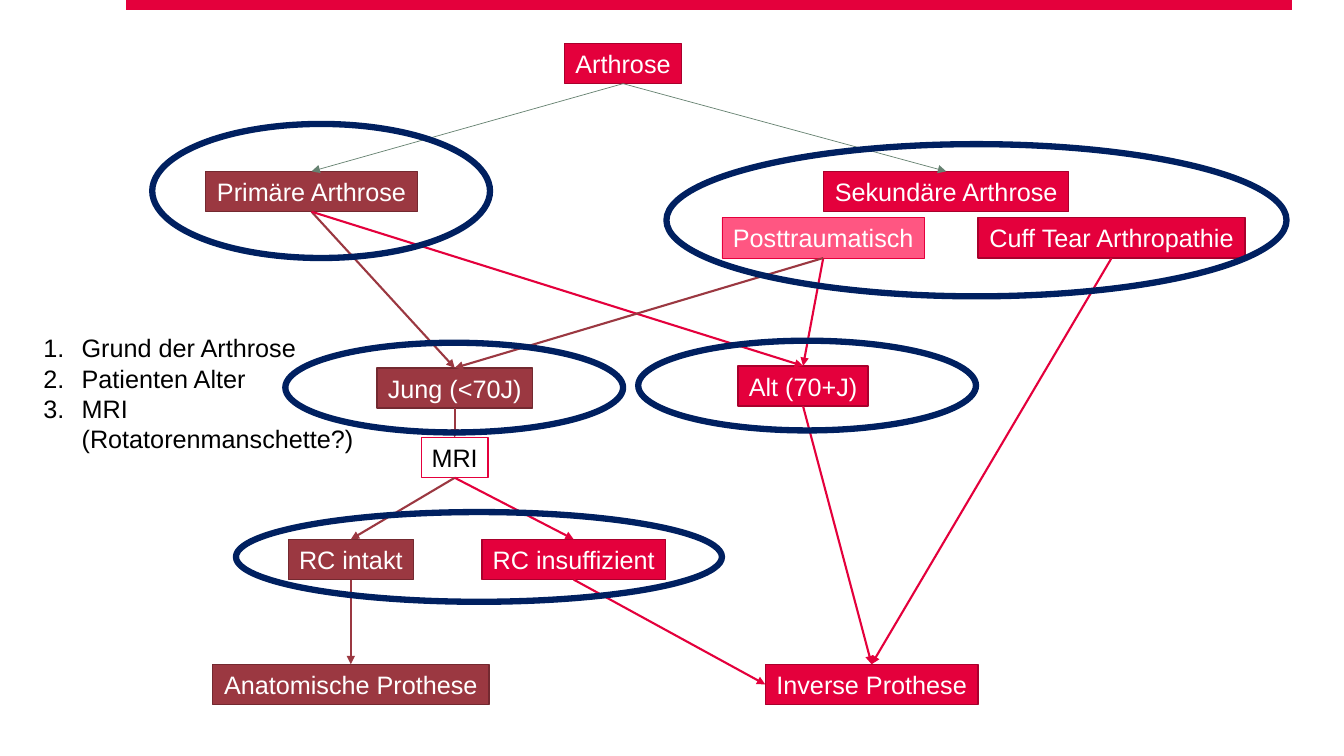
from dataclasses import dataclass

from lxml import etree
from pptx import Presentation
from pptx.dml.color import RGBColor
from pptx.enum.shapes import MSO_CONNECTOR, MSO_SHAPE
from pptx.enum.text import MSO_ANCHOR, MSO_AUTO_SIZE, PP_ALIGN
from pptx.oxml.ns import qn
from pptx.util import Emu, Pt

RECTANGLE, ELLIPSE = MSO_SHAPE.RECTANGLE, MSO_SHAPE.OVAL
STRAIGHT = MSO_CONNECTOR.STRAIGHT
FIT_TEXT = MSO_AUTO_SIZE.SHAPE_TO_FIT_TEXT
MIDDLE, TOP_ANCHOR = MSO_ANCHOR.MIDDLE, MSO_ANCHOR.TOP
LEFT_ALIGN, CENTER = PP_ALIGN.LEFT, PP_ALIGN.CENTER

TOP, LEFT, BOTTOM = 0, 1, 2  # connection sites of a rectangle
EMU_PER_PX = 9144  # 100 px to the inch
BOX_HEIGHT = 40


@dataclass(frozen=True)
class Theme:
    font: str = "Arial"
    size: int = 18
    red: str = "E4003C"
    dark_red: str = "A9002C"
    pink: str = "FF5682"
    brown: str = "9B3841"
    dark_brown: str = "732930"
    gray: str = "668271"
    navy: str = "002060"
    white: str = "FFFFFF"
    black: str = "000000"
    bar_width: float = 7.5
    ring_width: float = 4.5
    arrow_width: float = 1.5
    border_width: float = 1
    thin_width: float = 0.5


THEME = Theme()

# Kind of box: fill, border, border width, text colour
BOX_STYLES = {
    "inverse": (THEME.red, THEME.dark_red, THEME.border_width, THEME.white),
    "anatomic": (THEME.brown, THEME.dark_brown, THEME.border_width, THEME.white),
    "trauma": (THEME.pink, THEME.red, THEME.thin_width, THEME.white),
    "exam": (THEME.white, THEME.red, THEME.border_width, THEME.black),
}

# Text, kind, left, top, width
BOXES = [
    ("Arthrose", "inverse", 560, 43, 116),
    ("Sekundäre Arthrose", "inverse", 817, 170, 243),
    ("Primäre Arthrose", "anatomic", 204, 170, 210),
    ("Posttraumatisch", "trauma", 716, 216, 201),
    ("Cuff Tear Arthropathie", "inverse", 970, 216, 265),
    ("Jung (<70J)", "anatomic", 374, 365, 154),
    ("Alt (70+J)", "inverse", 732, 363, 129),
    ("MRI", "exam", 418, 434, 66),
    ("RC intakt", "anatomic", 286, 535, 124),
    ("RC insuffizient", "inverse", 478, 535, 182),
    ("Inverse Prothese", "inverse", 759, 659, 211),
    ("Anatomische Prothese", "anatomic", 211, 659, 274),
]

# From, to, colour, width, side where the arrow ends
BROWN_ARROW = (THEME.brown, THEME.arrow_width, TOP)
RED_ARROW = (THEME.red, THEME.arrow_width, TOP)
RED_SIDE_ARROW = (THEME.red, THEME.arrow_width, LEFT)
GRAY_ARROW = (THEME.gray, THEME.thin_width, TOP)
ARROWS = [
    ("Jung (<70J)", "MRI", *BROWN_ARROW),
    ("MRI", "RC intakt", *BROWN_ARROW),
    ("Cuff Tear Arthropathie", "Inverse Prothese", *RED_ARROW),
    ("MRI", "RC insuffizient", *RED_ARROW),
    ("RC intakt", "Anatomische Prothese", *BROWN_ARROW),
    ("RC insuffizient", "Inverse Prothese", *RED_SIDE_ARROW),
    ("Arthrose", "Primäre Arthrose", *GRAY_ARROW),
    ("Arthrose", "Sekundäre Arthrose", *GRAY_ARROW),
    ("Primäre Arthrose", "Jung (<70J)", *BROWN_ARROW),
    ("Primäre Arthrose", "Alt (70+J)", *RED_ARROW),
    ("Alt (70+J)", "Inverse Prothese", *RED_ARROW),
    ("Posttraumatisch", "Alt (70+J)", *RED_ARROW),
    ("Posttraumatisch", "Jung (<70J)", *BROWN_ARROW),
]

# Left, top, width, height
RINGS = [
    (151, 123, 335, 133),
    (661, 143, 615, 151),
    (283, 340, 335, 89),
    (633, 338, 335, 89),
    (234, 508, 482, 89),
]

QUESTIONS = ["Grund der Arthrose", "Patienten Alter", "MRI \v(Rotatorenmanschette?)"]


def px(*lengths):
    return [Emu(length * EMU_PER_PX) for length in lengths]


class SlideBuilder:
    def __init__(self, slide, theme):
        self.slide = slide
        self.theme = theme

    def format_line(self, line, color, width):
        line.color.rgb = RGBColor.from_string(color)
        line.width = Pt(width)

    def format_paragraph(self, paragraph, color, alignment):
        paragraph.alignment = alignment
        paragraph.font.name = self.theme.font
        paragraph.font.size = Pt(self.theme.size)
        paragraph.font.color.rgb = RGBColor.from_string(color)

    def fit_frame(self, frame, anchor):
        frame.word_wrap = False
        frame.auto_size = FIT_TEXT
        frame.vertical_anchor = anchor

    def box(self, text, kind, left, top, width):
        fill, border, border_width, text_color = BOX_STYLES[kind]
        shape = self.slide.shapes.add_shape(RECTANGLE, *px(left, top, width, BOX_HEIGHT))
        shape.shadow.inherit = False
        shape.fill.solid()
        shape.fill.fore_color.rgb = RGBColor.from_string(fill)
        self.format_line(shape.line, border, border_width)
        self.fit_frame(shape.text_frame, MIDDLE)
        shape.text_frame.text = text
        self.format_paragraph(shape.text_frame.paragraphs[0], text_color, CENTER)
        return shape

    def ring(self, left, top, width, height):
        shape = self.slide.shapes.add_shape(ELLIPSE, *px(left, top, width, height))
        shape.shadow.inherit = False
        shape.fill.background()
        self.format_line(shape.line, self.theme.navy, self.theme.ring_width)

    def line(self, start_x, start_y, end_x, end_y, color, width):
        connector = self.slide.shapes.add_connector(
            STRAIGHT, *px(start_x, start_y, end_x, end_y))
        self.format_line(connector.line, color, width)
        etree.SubElement(connector._element.spPr, qn("a:effectLst"))
        return connector

    def arrow(self, source, target, color, width, end_side):
        """Glue an arrow from the bottom of one box to a side of another."""
        connector = self.line(0, 0, 0, 0, color, width)
        connector.begin_connect(source, BOTTOM)
        connector.end_connect(target, end_side)
        outline = connector.line._get_or_add_ln()
        etree.SubElement(outline, qn("a:tailEnd"), type="triangle")

    def numbered_list(self, items, left, top, width, height):
        body = self.slide.placeholders[1]
        body.left, body.top, body.width, body.height = px(left, top, width, height)
        frame = body.text_frame
        self.fit_frame(frame, TOP_ANCHOR)
        indent, = px(38)
        for index, item in enumerate(items):
            paragraph = frame.paragraphs[0] if index == 0 else frame.add_paragraph()
            paragraph.text = item
            paragraph.space_before = Pt(0)
            paragraph.line_spacing = 1.0
            properties = paragraph._p.get_or_add_pPr()
            properties.set("marL", str(indent))
            properties.set("indent", str(-indent))
            etree.SubElement(properties, qn("a:buFont"), typeface=self.theme.font)
            etree.SubElement(properties, qn("a:buAutoNum"), type="arabicPeriod")
            self.format_paragraph(paragraph, self.theme.black, LEFT_ALIGN)


def main():
    presentation = Presentation()
    presentation.slide_width, presentation.slide_height = px(1333, 750)
    slide = presentation.slides.add_slide(presentation.slide_layouts[1])
    title = slide.shapes.title.element
    title.getparent().remove(title)

    builder = SlideBuilder(slide, THEME)
    builder.line(125, 5, 1281, 5, THEME.red, THEME.bar_width)
    boxes = {text: builder.box(text, *rest) for text, *rest in BOXES}
    for source, target, *style in ARROWS:
        builder.arrow(boxes[source], boxes[target], *style)
    for ring in RINGS:
        builder.ring(*ring)
    builder.numbered_list(QUESTIONS, 33, 325, 330, 131)
    presentation.save("out.pptx")


if __name__ == "__main__":
    main()
